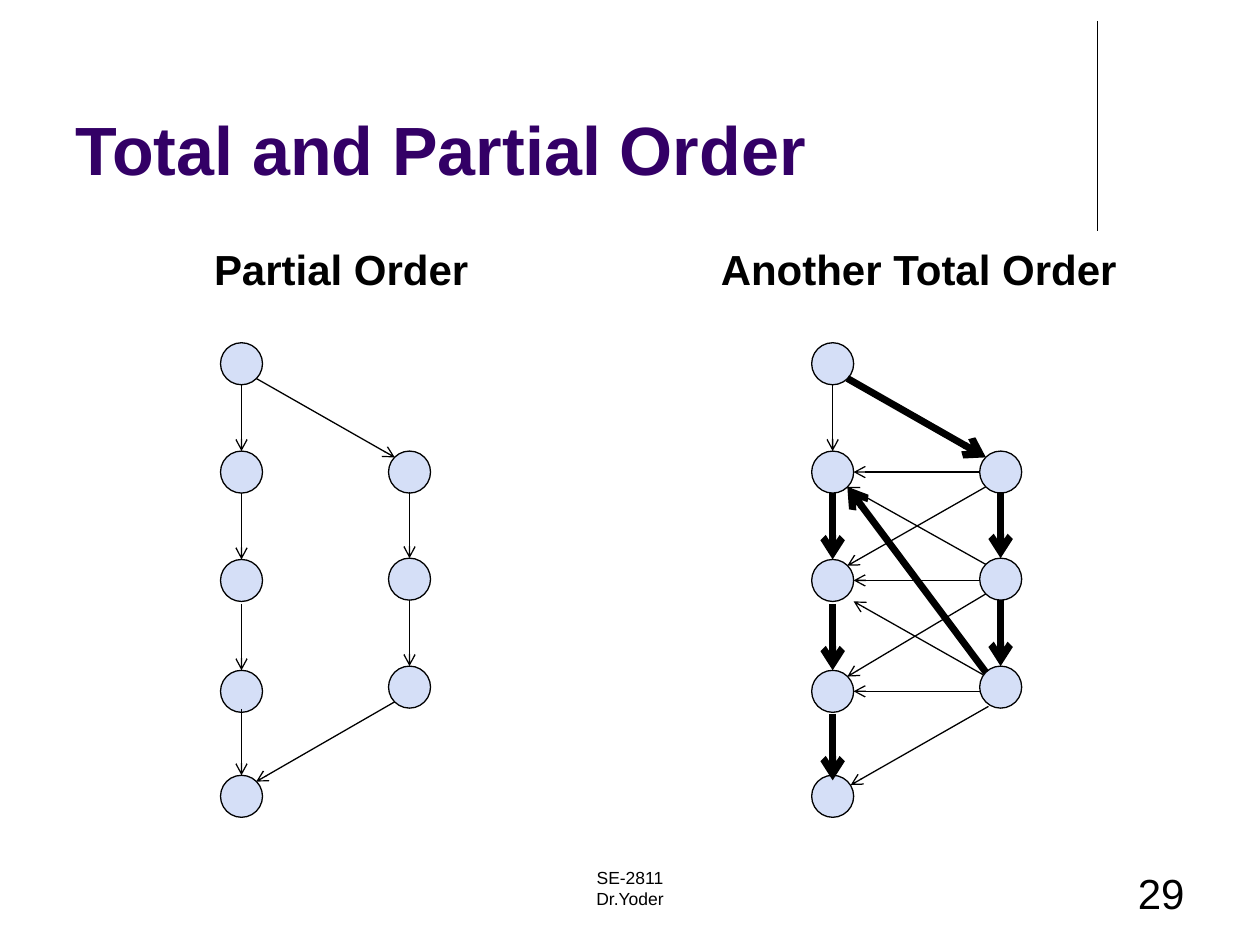
import pptx
import pptx.dml.color
import pptx.enum.shapes
import pptx.enum.text
import pptx.oxml.xmlchemy
import pptx.util

COLUMNS, ROWS = 60, 45
CELL = pptx.util.Inches(10) / COLUMNS
BLACK, PURPLE, PALE_BLUE = "000000", "330066", "D5DFF7"
THIN, THICK = 0.75, 4
ALIGN = pptx.enum.text.PP_ALIGN
ANCHOR = pptx.enum.text.MSO_ANCHOR

NODES = {
    "L0": (0, 0), "L1": (0, 2.58), "L2": (0, 5.16), "L3": (0, 7.8), "L4": (0, 10.3),
    "R1": (4, 2.58), "R2": (4, 5.13), "R3": (4, 7.7),
}
NODES_ACROSS = 5
ARROW_DROP = 1.58
CORNER = 0.35
STILL = (0, 0)

PARTIAL_EDGES = [
    ("L0", "L1", THIN), ("L1", "L2", THIN), ("L2", "L3", THIN), ("L3", "L4", THIN),
    ("L0", "R1", THIN), ("R1", "R2", THIN), ("R2", "R3", THIN), ("R3", "L4", THIN),
]
TOTAL_EDGES = [
    ("L1", "L2", THICK), ("L2", "L3", THICK), ("L0", "R1", THICK), ("R1", "R2", THICK),
    ("R2", "L1", THIN), ("R3", "L1", THICK), ("R1", "L1", THIN), ("L0", "L1", THIN),
    ("R1", "L2", THIN), ("R2", "L2", THIN), ("R2", "R3", THICK), ("R2", "L3", THIN),
    ("R3", "L2", THIN, (-0.06, 0.06), (0.15, 0.15)), ("R3", "L3", THIN),
    ("L3", "L4", THICK, (0, 0.12), (0, 0.12)),
    ("R3", "L4", THIN, (0.06, 0.11), (0.08, 0.08)),
]


def colour(value):
    return pptx.dml.color.RGBColor.from_string(value)


def cells(*values):
    return [round(value * CELL) for value in values]


def set_values(target, values):
    for name, value in values.items():
        setattr(target, name, value)


def write(shape, box, lines, size, bold=False, shade=BLACK, align=ALIGN.LEFT, anchor=ANCHOR.TOP):
    set_values(shape, dict(zip(("left", "top", "width", "height"), cells(*box))))
    frame = shape.text_frame
    frame.text = "\n".join(lines)
    set_values(frame, {
        "auto_size": pptx.enum.text.MSO_AUTO_SIZE.NONE,
        "word_wrap": True,
        "vertical_anchor": anchor,
    })
    for para in frame.paragraphs:
        set_values(para, {"alignment": align, "space_before": pptx.util.Pt(0)})
        for span in para.runs:
            set_values(span.font, {"name": "Arial", "size": pptx.util.Pt(size), "bold": bold})
            span.font.color.rgb = colour(shade)


def draw_line(page, start, end, weight, arrow=False):
    line = page.shapes.add_connector(
        pptx.enum.shapes.MSO_CONNECTOR.STRAIGHT, *cells(*start, *end))
    line.line.color.rgb = colour(BLACK)
    line.line.width = pptx.util.Pt(weight)
    if arrow:
        head = pptx.oxml.xmlchemy.OxmlElement("a:tailEnd")
        head.set("type", "arrow")
        line.line._get_or_add_ln().append(head)
    line._element.spPr.append(pptx.oxml.xmlchemy.OxmlElement("a:effectLst"))


def edge_ends(source, target):
    (x0, y0), (x1, y1) = [(x + 0.5, y + 0.5) for x, y in (NODES[source], NODES[target])]
    if x0 == x1:
        return (x0, y1 - 0.5 - ARROW_DROP), (x1, y1 - 0.5)
    side = 1 if x1 > x0 else -1
    if source[1] == target[1]:
        return (x0 + side * 0.5, y1), (x1 - side * 0.5, y1)
    fall = 1 if y1 > y0 else -1
    return (x0 + side * CORNER, y0 + fall * CORNER), (x1 - side * CORNER, y1 - fall * CORNER)


def draw_graph(page, box, edges):
    left, top, width = box
    unit = width / NODES_ACROSS

    def place(point, shift=STILL):
        return left + (point[0] + shift[0]) * unit, top + (point[1] + shift[1]) * unit

    for position in NODES.values():
        node = page.shapes.add_shape(
            pptx.enum.shapes.MSO_SHAPE.OVAL, *cells(*place(position), unit, unit))
        node.shadow.inherit = False
        node.fill.solid()
        node.fill.fore_color.rgb = colour(PALE_BLUE)
        node.line.color.rgb = colour(BLACK)
        node.line.width = pptx.util.Pt(THIN)
    for source, target, weight, *shifts in edges:
        start_shift, end_shift = shifts or (STILL, STILL)
        start, end = edge_ends(source, target)
        draw_line(page, place(start, start_shift), place(end, end_shift), weight, arrow=True)


def draw_header(page, box):
    left, top = box[:2]
    rule_left, rule_top = left + 49.25, top - 0.8
    draw_line(page, (rule_left, rule_top), (rule_left, rule_top + 10), THIN)
    write(page.shapes.title, box, ["Total and Partial Order"], 39, True, PURPLE,
          anchor=ANCHOR.BOTTOM)


def draw_comparison(page, box, holder, heading, graph_left, edges):
    left, top = box[:2]
    write(holder, box, [heading], 24, True, align=ALIGN.CENTER, anchor=ANCHOR.BOTTOM)
    draw_graph(page, (left + graph_left, top + 6.22, 10), edges)


def draw_footer(page, box):
    left, top, width, height = box
    parts = [
        (17.5, 19, ["SE-2811", "Dr.Yoder"], 10, ALIGN.CENTER),
        (width - 14, 14, ["29"], 24, ALIGN.RIGHT),
    ]
    for offset, span, lines, size, align in parts:
        text = page.shapes.add_textbox(0, 0, 0, 0)
        write(text, (left + offset, top, span, height), lines, size, align=align)


def main():
    deck = pptx.Presentation()
    deck.slide_width, deck.slide_height = cells(COLUMNS, ROWS)
    page = deck.slides.add_slide(deck.slide_layouts.get_by_name("Comparison"))
    holders = {holder.placeholder_format.idx: holder for holder in page.placeholders}
    for index in (2, 4):
        element = holders[index]._element
        element.getparent().remove(element)
    draw_header(page, (3, 1.8, 54, 7.5))
    draw_comparison(page, (3, 10.1, 26.5, 4.2), holders[1], "Partial Order", 7.5, PARTIAL_EDGES)
    draw_comparison(page, (30.5, 10.1, 26.5, 4.2), holders[3], "Another Total Order", 8.15,
                    TOTAL_EDGES)
    draw_footer(page, (3, 41, 54, 3))
    deck.save("out.pptx")


if __name__ == "__main__":
    main()
